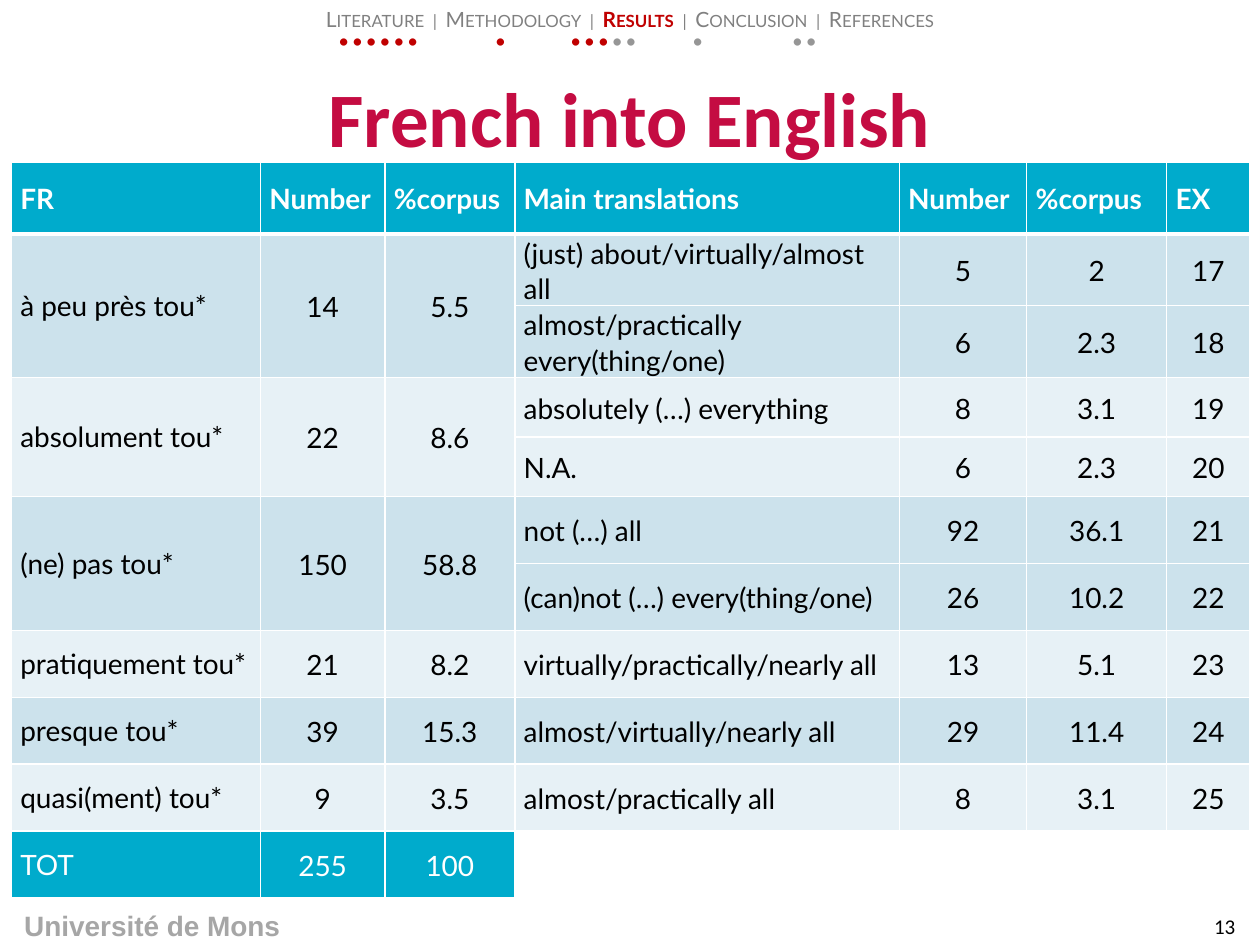
from dataclasses import dataclass

from lxml import etree
from pptx import Presentation
from pptx.dml.color import RGBColor
from pptx.enum.text import MSO_ANCHOR, PP_ALIGN
from pptx.oxml.ns import qn
from pptx.util import Cm, Pt

LEFT, CENTER, JUSTIFY = PP_ALIGN.LEFT, PP_ALIGN.CENTER, PP_ALIGN.JUSTIFY
TOP, MIDDLE = MSO_ANCHOR.TOP, MSO_ANCHOR.MIDDLE

WHITE, BLACK, TEAL = "FFFFFF", "000000", "00ABCC"
RED, GREY, DOT_GREY = "C00000", "808080", "969696"
BANDS = ("CCE2EC", "E7F1F6")

COL_WIDTHS = (5.02, 2.51, 2.62, 7.75, 2.57, 2.82, 1.68)
ROW_HEIGHTS = (1.44, 1.35, 1.35, 1.2, 1.2) + (1.35,) * 6
HEADERS = ("FR", "Number", "%corpus", "Main translations", "Number", "%corpus", "EX")
TOTALS = ("TOT", "255", "100")
DOT_TABS = (3.16, 4.68, 7.14, 9.15)


@dataclass
class Run:
    text: str
    size: float
    color: str
    font: str = "Lato"
    bold: bool = False
    small_caps: bool = False


@dataclass
class Box:
    left: float
    top: float
    width: float
    height: float
    runs: list[Run]
    align: PP_ALIGN = CENTER
    anchor: MSO_ANCHOR = TOP
    tabs: tuple[float, ...] = ()


@dataclass
class Group:
    french: str
    number: str
    share: str
    translations: list[tuple[str, str, str, str]]


GROUPS = [
    Group("à peu près tou*", "14", "5.5", [
        ("(just) about/virtually/almost all", "5", "2", "17"),
        ("almost/practically every(thing/one)", "6", "2.3", "18")]),
    Group("absolument tou*", "22", "8.6", [
        ("absolutely (…) everything", "8", "3.1", "19"),
        ("N.A.", "6", "2.3", "20")]),
    Group("(ne) pas tou*", "150", "58.8", [
        ("not (…) all", "92", "36.1", "21"),
        ("(can)not (…) every(thing/one)", "26", "10.2", "22")]),
    Group("pratiquement tou*", "21", "8.2", [
        ("virtually/practically/nearly all", "13", "5.1", "23")]),
    Group("presque tou*", "39", "15.3", [
        ("almost/virtually/nearly all", "29", "11.4", "24")]),
    Group("quasi(ment) tou*", "9", "3.5", [
        ("almost/practically all", "8", "3.1", "25")]),
]

BOXES = [
    Box(-0.03, 18.19, 6.2, 0.94, [Run("Université de Mons", 16, "A6A6A6", "Arial", True)]),
    Box(1.27, 0.76, 22.86, 3.18,
        [Run("French into English", 44, "C40C42", "Calibri", True)], anchor=MIDDLE),
    Box(23.98, 18.29, 1.42, 0.76, [Run("13", 12, BLACK, "Calibri")], anchor=MIDDLE),
    Box(0, 0, 25.4, 0.64, [
        Run("Literature  |  Methodology  |  ", 12, GREY, small_caps=True),
        Run("Results", 12, RED, bold=True, small_caps=True),
        Run("  |  Conclusion  |  References", 12, GREY, small_caps=True)]),
    Box(6.58, 0.41, 14.76, 1.09, [
        Run("• • • • • •\t•\t• • • ", 12, RED, bold=True, small_caps=True),
        Run("• •\t•\t• •", 12, DOT_GREY, bold=True, small_caps=True)],
        align=LEFT, tabs=DOT_TABS),
]


def rgb(color: str) -> RGBColor:
    return RGBColor.from_string(color)


def add_run(p, run: Run) -> None:
    r = p.add_run()
    r.text = run.text
    r.font.size = Pt(run.size)
    r.font.name = run.font
    r.font.bold = run.bold
    r.font.color.rgb = rgb(run.color)
    if run.small_caps:
        r.font._element.set("cap", "small")


def add_tabs(p, tabs: tuple[float, ...]) -> None:
    tab_list = etree.SubElement(p._p.get_or_add_pPr(), qn("a:tabLst"))
    for pos in tabs:
        etree.SubElement(tab_list, qn("a:tab"), pos=str(Cm(pos)), algn="l")


def add_box(s, box: Box) -> None:
    sp = s.shapes.add_textbox(Cm(box.left), Cm(box.top), Cm(box.width), Cm(box.height))
    tf = sp.text_frame
    tf.word_wrap = True
    tf.vertical_anchor = box.anchor
    p = tf.paragraphs[0]
    p.alignment = box.align
    if box.tabs:
        add_tabs(p, box.tabs)
    for run in box.runs:
        add_run(p, run)


def set_borders(cell, bottom: float) -> None:
    tc_pr = cell._tc.get_or_add_tcPr()
    for i, (side, width) in enumerate((("L", 1), ("R", 1), ("T", 1), ("B", bottom))):
        ln = etree.Element(qn(f"a:ln{side}"), w=str(Pt(width)))
        fill = etree.SubElement(ln, qn("a:solidFill"))
        etree.SubElement(fill, qn("a:srgbClr"), val=WHITE)
        tc_pr.insert(i, ln)


def style_cell(cell, fill: str, bottom: float = 1) -> None:
    cell.fill.solid()
    cell.fill.fore_color.rgb = rgb(fill)
    cell.vertical_anchor = MIDDLE
    cell.margin_left = cell.margin_right = Cm(0.18)
    cell.margin_top = cell.margin_bottom = 0
    set_borders(cell, bottom)


def write_cell(cell, text: str, align: PP_ALIGN, color: str = BLACK,
               bold: bool = False) -> None:
    p = cell.text_frame.paragraphs[0]
    p.alignment = align
    if align != JUSTIFY:
        p.line_spacing = 1.07
        p.space_after = Pt(8)
    add_run(p, Run(text, 16, color, bold=bold))


def add_results(s) -> None:
    n_rows, n_cols = len(ROW_HEIGHTS), len(COL_WIDTHS)
    table = s.shapes.add_table(n_rows, n_cols, Cm(0.23), Cm(3.28),
                               Cm(sum(COL_WIDTHS)), Cm(sum(ROW_HEIGHTS))).table
    for col, width in zip(table.columns, COL_WIDTHS):
        col.width = Cm(width)
    for row, height in zip(table.rows, ROW_HEIGHTS):
        row.height = Cm(height)

    for c, text in enumerate(HEADERS):
        style_cell(table.cell(0, c), TEAL, bottom=3)
        write_cell(table.cell(0, c), text, JUSTIFY, WHITE, True)

    top = 1
    for i, group in enumerate(GROUPS):
        for r, entry in enumerate(group.translations, top):
            for c in range(n_cols):
                style_cell(table.cell(r, c), BANDS[i % 2])
            for c, text in enumerate(entry, 3):
                write_cell(table.cell(r, c), text, LEFT if c == 3 else CENTER)
        last = top + len(group.translations) - 1
        for c, text in enumerate((group.french, group.number, group.share)):
            if last > top:
                table.cell(top, c).merge(table.cell(last, c))
            write_cell(table.cell(top, c), text, CENTER if c else JUSTIFY)
        top = last + 1

    for c in range(n_cols):
        style_cell(table.cell(top, c), TEAL if c < len(TOTALS) else WHITE)
    for c, text in enumerate(TOTALS):
        write_cell(table.cell(top, c), text, CENTER if c else JUSTIFY, WHITE)


def main() -> None:
    prs = Presentation()
    prs.slide_width, prs.slide_height = Cm(25.4), Cm(19.05)
    s = prs.slides.add_slide(prs.slide_layouts[6])
    add_results(s)
    for box in BOXES:
        add_box(s, box)
    prs.save("out.pptx")


if __name__ == "__main__":
    main()
